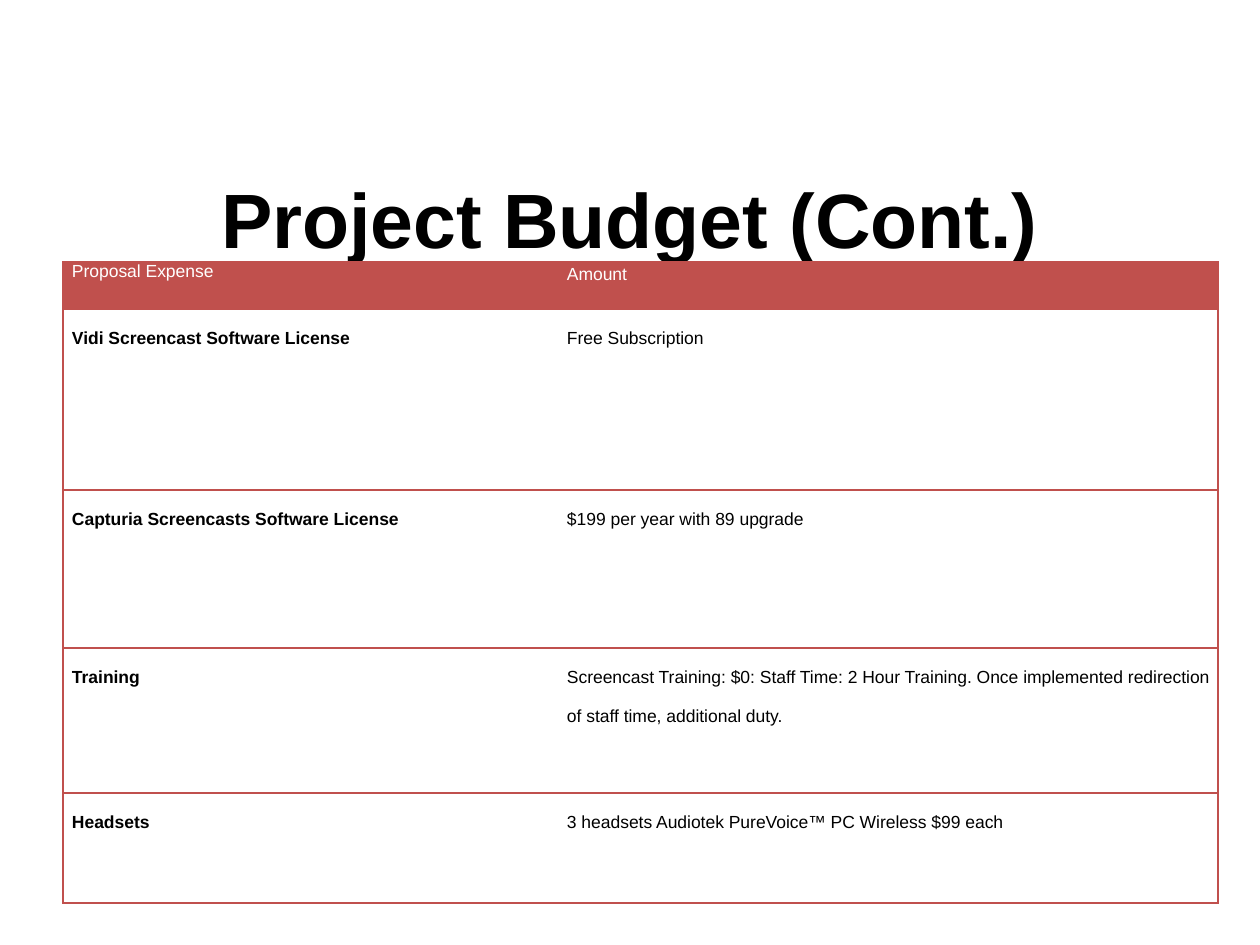
"""Build the project budget slide with its expense table."""
import pptx
import pptx.dml.color
import pptx.enum.text
import pptx.oxml.ns
import pptx.util
import lxml.etree

PX = 914400 // 126
RED = pptx.dml.color.RGBColor(0xC0, 0x50, 0x4D)
WHITE = pptx.dml.color.RGBColor(0xFF, 0xFF, 0xFF)
BLACK = pptx.dml.color.RGBColor(0x00, 0x00, 0x00)
COLS = [495, 660]
HEIGHTS = [47, 181, 158, 145, 110]
ROWS = [
    ("Proposal Expense", "Amount"),
    ("Vidi Screencast Software License", "Free Subscription"),
    ("Capturia Screencasts Software License", "$199 per year with 89 upgrade"),
    ("Training", "Screencast Training: $0: Staff Time: 2 Hour Training. "
                 "Once implemented redirection of staff time, additional duty."),
    ("Headsets", "3 headsets Audiotek PureVoice™ PC Wireless $99 each"),
]


def set_border(cell, side, color):
    tcPr = cell._tc.get_or_add_tcPr()
    ln = lxml.etree.SubElement(tcPr, pptx.oxml.ns.qn("a:ln" + side), w="12700")
    if color is None:
        lxml.etree.SubElement(ln, pptx.oxml.ns.qn("a:noFill"))
    else:
        fill = lxml.etree.SubElement(ln, pptx.oxml.ns.qn("a:solidFill"))
        lxml.etree.SubElement(fill, pptx.oxml.ns.qn("a:srgbClr"), val=str(color))


def set_font(p, size, bold, color):
    p.font.name = "Arial"
    p.font.size = pptx.util.Pt(size)
    p.font.bold = bold
    p.font.color.rgb = color


prs = pptx.Presentation()
prs.slide_width = 1260 * PX
prs.slide_height = 945 * PX
s = prs.slides.add_slide(prs.slide_layouts[5])

title = s.shapes.title
title.left, title.top, title.width, title.height = 63 * PX, 158 * PX, 1134 * PX, 157 * PX
tf = title.text_frame
tf.text = "Project Budget (Cont.)"
tf.vertical_anchor = pptx.enum.text.MSO_ANCHOR.TOP
tf.margin_top = 14 * PX
p = tf.paragraphs[0]
p.alignment = pptx.enum.text.PP_ALIGN.CENTER
set_font(p, 44, True, BLACK)

table = s.shapes.add_table(len(ROWS), len(COLS), 63 * PX, 262 * PX,
                           sum(COLS) * PX, sum(HEIGHTS) * PX).table
table.first_row = False
table.horz_banding = False
for column, width in zip(table.columns, COLS):
    column.width = width * PX
for r, (height, texts) in enumerate(zip(HEIGHTS, ROWS)):
    table.rows[r].height = height * PX
    for c, text in enumerate(texts):
        cell = table.cell(r, c)
        cell.margin_left = cell.margin_right = 9 * PX
        cell.margin_top = cell.margin_bottom = 0
        cell.text = text
        p = cell.text_frame.paragraphs[0]
        if r > 0:
            p.line_spacing = 2.0
        elif c == 1:
            p.line_spacing = 1.15
        set_font(p, 10, r > 0 and c == 0, BLACK if r else WHITE)
        set_border(cell, "L", RED if c == 0 else None)
        set_border(cell, "R", RED if c == 1 else None)
        set_border(cell, "T", RED)
        set_border(cell, "B", RED)
        if r == 0:
            cell.fill.solid()
            cell.fill.fore_color.rgb = RED
        else:
            cell.fill.background()

prs.save("out.pptx")
